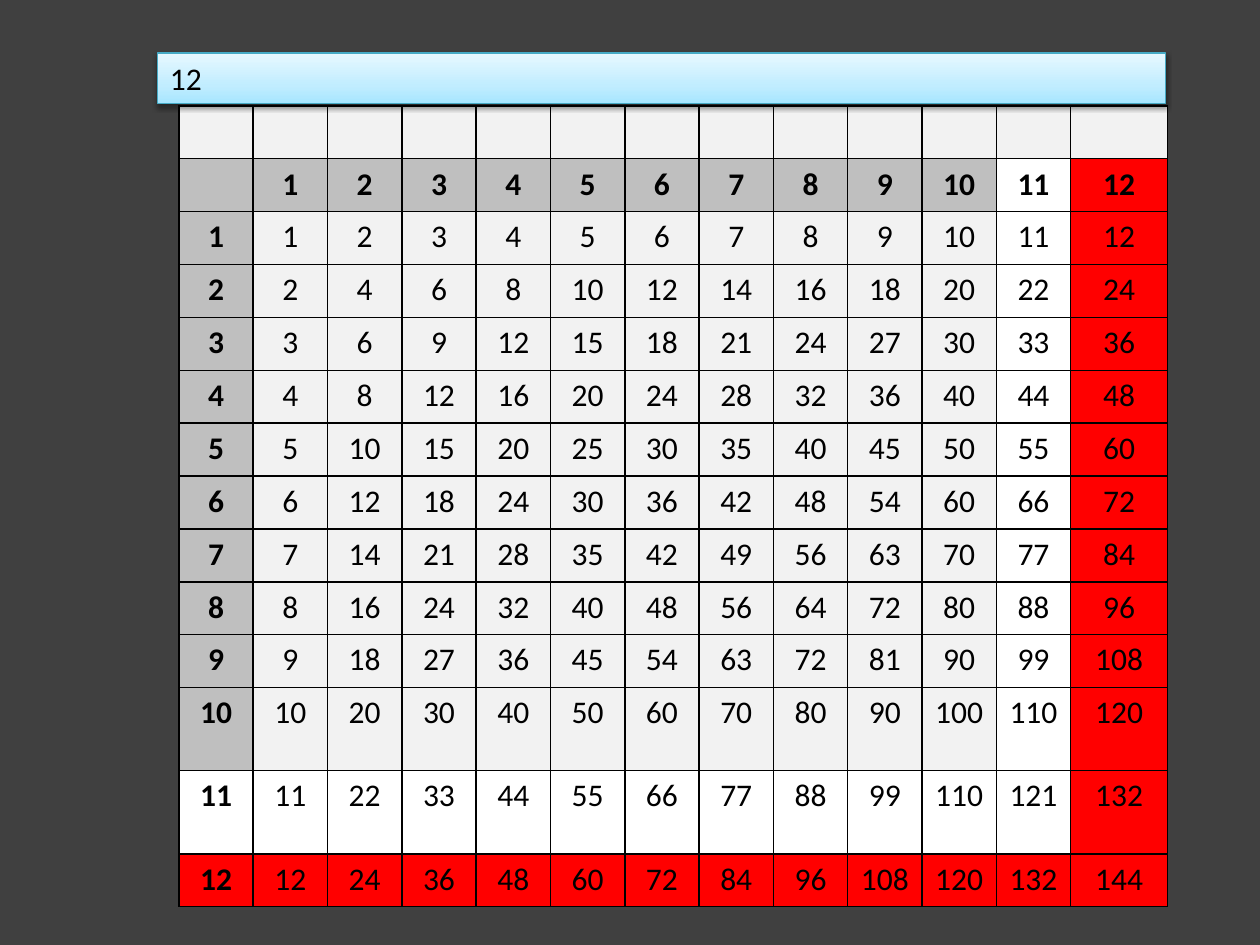
import copy

import pptx
import pptx.dml.color
import pptx.enum.shapes
import pptx.enum.text
import pptx.oxml
import pptx.oxml.ns
import pptx.util

Inches, Pt = pptx.util.Inches, pptx.util.Pt

# Content
BANNER = "12"
FACTORS = list(range(1, 13))
ROWS = [
    [""] * 13,
    ["", *FACTORS],
    *([n, *(n * factor for factor in FACTORS)] for n in FACTORS),
]
COLUMN_WIDTHS = [0.59] * 12 + [0.77]
ROW_HEIGHTS = [0.42] * 11 + [0.66] * 2 + [0.42]
BANNER_STOPS = [(0, "A7E6FF"), (0.35, "C1EDFF"), (1, "E7F8FF")]
COLORS = {
    "background": "404040",
    "body": "F2F2F2",
    "header": "BFBFBF",
    "eleven": "FFFFFF",
    "twelve": "FF0000",
    "ink": "000000",
    "banner_edge": "46AAC5",
}
FONT = "Calibri"


def rgb(name):
    return pptx.dml.color.RGBColor.from_string(COLORS[name])


def style_text(paragraph, bold=False):
    paragraph.font.name = FONT
    paragraph.font.size = Pt(18)
    paragraph.font.bold = bold
    paragraph.font.color.rgb = rgb("ink")


def cell_color(row, column):
    """Outer bands for 12 and 11 win over the headers and the body."""
    if row == 0:
        return "body"
    if row == 13 or column == 12:
        return "twelve"
    if row == 12 or column == 11:
        return "eleven"
    return "header" if row == 1 or column == 0 else "body"


def add_borders(cell):
    properties = cell._tc.get_or_add_tcPr()
    for position, side in enumerate(("lnL", "lnR", "lnT", "lnB")):
        properties.insert(position, pptx.oxml.parse_xml(
            f'<a:{side} {pptx.oxml.ns.nsdecls("a")} w="12700"><a:solidFill>'
            f'<a:srgbClr val="{COLORS["ink"]}"/></a:solidFill></a:{side}>'))


def add_times_table(slide):
    table = slide.shapes.add_table(
        len(ROWS), len(COLUMN_WIDTHS), Inches(1.42), Inches(0.84),
        Inches(sum(COLUMN_WIDTHS)), Inches(sum(ROW_HEIGHTS))).table
    for column, width in zip(table.columns, COLUMN_WIDTHS):
        column.width = Inches(width)
    for row, height in zip(table.rows, ROW_HEIGHTS):
        row.height = Inches(height)
    for r, values in enumerate(ROWS):
        for c, value in enumerate(values):
            cell = table.cell(r, c)
            cell.margin_left = cell.margin_right = Inches(0.05)
            cell.text = str(value)
            cell.fill.solid()
            cell.fill.fore_color.rgb = rgb(cell_color(r, c))
            add_borders(cell)
            paragraph = cell.text_frame.paragraphs[0]
            paragraph.alignment = pptx.enum.text.PP_ALIGN.CENTER
            style_text(paragraph, bold=r == 1 or c == 0)


def add_banner(slide):
    banner = slide.shapes.add_shape(
        pptx.enum.shapes.MSO_SHAPE.RECTANGLE,
        Inches(1.25), Inches(0.42), Inches(8), Inches(0.4))
    banner.line.color.rgb = rgb("banner_edge")
    banner.line.width = Pt(0.75)

    # Three-stop gradient, palest at the top
    banner.fill.gradient()
    banner.fill.gradient_angle = 90
    stop_list = banner._element.spPr.find(".//" + pptx.oxml.ns.qn("a:gsLst"))
    stop_list.append(copy.deepcopy(stop_list[-1]))
    for stop, (position, color) in zip(banner.fill.gradient_stops, BANNER_STOPS):
        stop.position = position
        stop.color.rgb = pptx.dml.color.RGBColor.from_string(color)

    # Soft shadow straight below
    banner.shadow.inherit = False
    effects = banner._element.spPr.find(pptx.oxml.ns.qn("a:effectLst"))
    effects.append(pptx.oxml.parse_xml(
        f'<a:outerShdw {pptx.oxml.ns.nsdecls("a")} blurRad="{Pt(3.1)}" '
        f'dist="{Pt(1.6)}" dir="5400000" rotWithShape="0">'
        f'<a:srgbClr val="{COLORS["ink"]}"><a:alpha val="38000"/></a:srgbClr>'
        '</a:outerShdw>'))

    frame = banner.text_frame
    frame.word_wrap = True
    frame.auto_size = pptx.enum.text.MSO_AUTO_SIZE.SHAPE_TO_FIT_TEXT
    frame.vertical_anchor = pptx.enum.text.MSO_ANCHOR.TOP
    frame.text = BANNER
    frame.paragraphs[0].alignment = pptx.enum.text.PP_ALIGN.LEFT
    style_text(frame.paragraphs[0])


def main():
    deck = pptx.Presentation()
    deck.slide_width, deck.slide_height = Inches(10), Inches(7.5)
    slide = deck.slides.add_slide(deck.slide_layouts[6])
    slide.background.fill.solid()
    slide.background.fill.fore_color.rgb = rgb("background")
    add_times_table(slide)
    add_banner(slide)
    deck.save("out.pptx")


if __name__ == "__main__":
    main()
